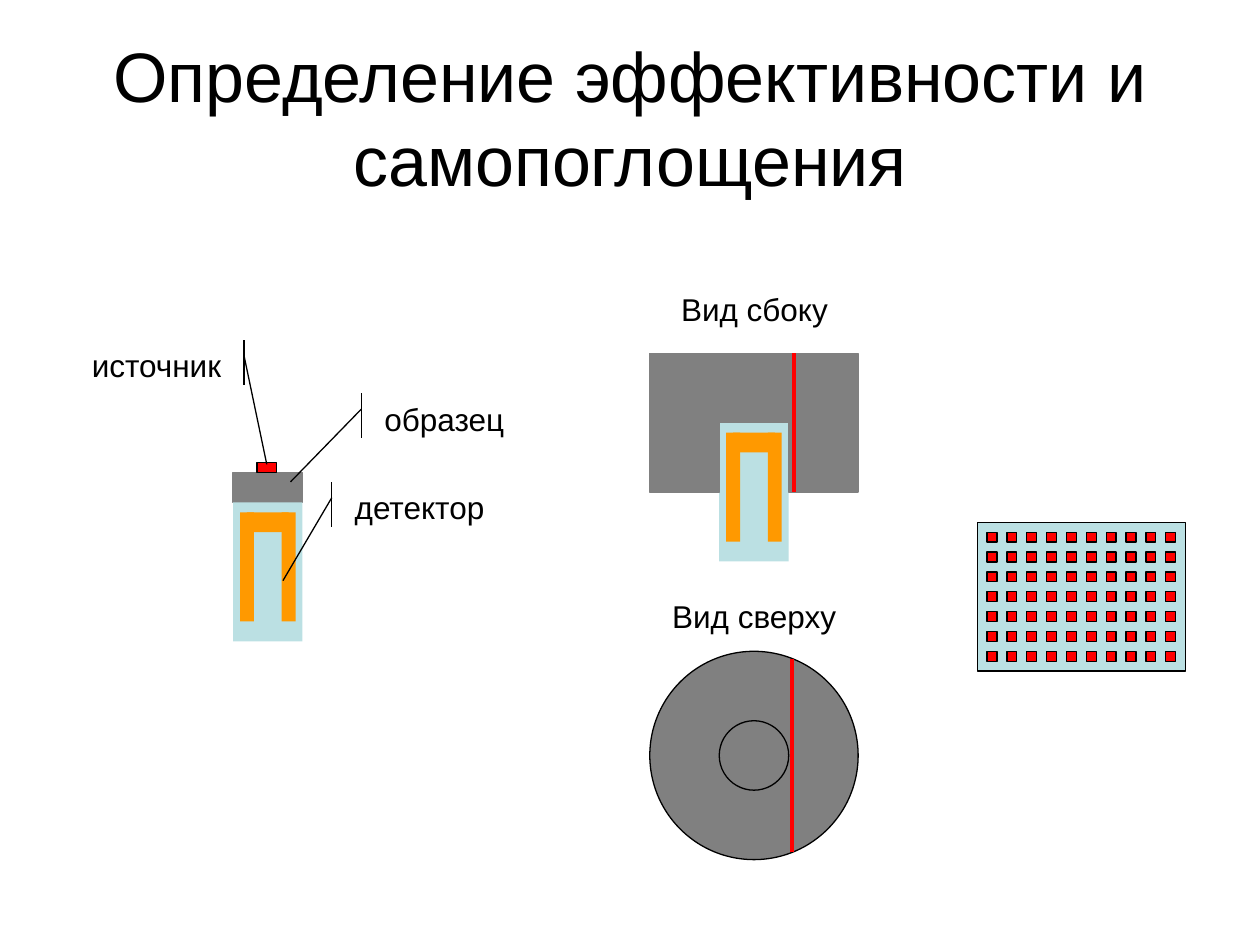
import pptx
import pptx.util
import pptx.dml.color
import pptx.enum.shapes
import pptx.enum.text
import pptx.oxml.xmlchemy

Cm = pptx.util.Cm
Pt = pptx.util.Pt
RGBColor = pptx.dml.color.RGBColor
Kind = pptx.enum.shapes.MSO_SHAPE
Align = pptx.enum.text.PP_ALIGN
Anchor = pptx.enum.text.MSO_ANCHOR

BLACK = RGBColor(0x00, 0x00, 0x00)
GRAY = RGBColor(0x80, 0x80, 0x80)
TEAL = RGBColor(0xBB, 0xE0, 0xE3)
ORANGE = RGBColor(0xFF, 0x99, 0x00)
RED = RGBColor(0xFF, 0x00, 0x00)


def draw(shapes, kind, box, fill=None, line=None):
    shape = shapes.add_shape(kind, *[Cm(v) for v in box])
    shape.shadow.inherit = False
    if fill is None:
        shape.fill.background()
    else:
        shape.fill.solid()
        shape.fill.fore_color.rgb = fill
    if line is None:
        shape.line.fill.background()
    else:
        shape.line.color.rgb = line
        shape.line.width = Pt(0.75)
    return shape


def write(frame, text, size, align, anchor=Anchor.TOP):
    frame.vertical_anchor = anchor
    para = frame.paragraphs[0]
    para.text = text
    para.alignment = align
    para.font.size = Pt(size)
    para.font.name = "Arial"
    para.font.color.rgb = BLACK


def title(shapes, box, text):
    frame = shapes.add_textbox(*[Cm(v) for v in box]).text_frame
    frame.word_wrap = True
    write(frame, text, 40, Align.CENTER, Anchor.MIDDLE)


def label(shapes, box, text):
    frame = shapes.add_textbox(*[Cm(v) for v in box]).text_frame
    frame.word_wrap = False
    frame.auto_size = pptx.enum.text.MSO_AUTO_SIZE.SHAPE_TO_FIT_TEXT
    write(frame, text, 18, Align.LEFT)


def callout(shapes, left, top, text, points, align=Align.LEFT):
    box = (left, top, 3.58, 0.91)
    shape = draw(shapes, Kind.LINE_CALLOUT_1_ACCENT_BAR, box, None, BLACK)
    for index, value in enumerate(points):
        shape.adjustments[index] = value
    write(shape.text_frame, text, 18, align)


def beam(shapes, x, top, bottom):
    ends = [Cm(v) for v in (x, top, x, bottom)]
    line = shapes.add_connector(pptx.enum.shapes.MSO_CONNECTOR.STRAIGHT, *ends)
    line.line.color.rgb = RED
    line.line.width = Pt(2)
    line._element.spPr.append(pptx.oxml.xmlchemy.OxmlElement("a:effectLst"))


def detector(shapes, left, top):
    group = shapes.add_group_shape().shapes
    draw(group, Kind.RECTANGLE, (left, top, 1.4, 2.8), TEAL)
    for x, wide, high in ((0.28, 0.84, 0.4), (0.14, 0.28, 2.2), (0.98, 0.28, 2.2)):
        draw(group, Kind.RECTANGLE, (left + x, top + 0.2, wide, high), ORANGE)


def setup(shapes, left, top):
    draw(shapes, Kind.RECTANGLE, (left, top, 1.4, 0.6), GRAY, GRAY)
    detector(shapes, left, top + 0.6)
    callout(shapes, left + 2.8, top - 1.6, "образец", (0.346, -0.059, 1.962, -0.459))
    callout(shapes, left + 2.2, top + 0.19, "детектор", (0.346, -0.059, 2.183, -0.334))
    draw(shapes, Kind.RECTANGLE, (left + 0.48, top - 0.2, 0.4, 0.2), RED, BLACK)
    callout(shapes, left - 3.57, top - 2.67, "источник",
            (0.346, 1.059, 2.75, 1.187), Align.RIGHT)


def side(shapes, left, top):
    detector(shapes, left + 1.4, top + 1.4)
    group = shapes.add_group_shape().shapes
    for x, wide, high in ((0.8, 2.4, 1.4), (2.8, 1.4, 2.8), (0, 1.4, 2.8)):
        draw(group, Kind.RECTANGLE, (left + x, top, wide, high), GRAY, GRAY)
    beam(shapes, left + 2.91, top, top + 2.8)
    label(shapes, (left + 0.38, top - 1.4, 3.55, 1.02), "Вид сбоку")


def above(shapes, left, top):
    for gap, size in ((0, 4.2), (1.4, 1.4)):
        draw(shapes, Kind.OVAL, (left + gap, top + gap, size, size), GRAY, BLACK)
    beam(shapes, left + 2.87, top + 0.15, top + 4.05)
    label(shapes, (left + 0.2, top - 1.21, 3.9, 1.02), "Вид сверху")


def grid(shapes, left, top, cols, rows):
    group = shapes.add_group_shape().shapes
    pitch, size = 0.4, 0.2
    box = (left, top, cols * pitch + size, rows * pitch + size)
    draw(group, Kind.RECTANGLE, box, TEAL, BLACK)
    for row in range(rows):
        for col in range(cols):
            cell = (left + size + col * pitch, top + size + row * pitch, size, size)
            draw(group, Kind.RECTANGLE, cell, RED, BLACK)


def main():
    deck = pptx.Presentation()
    deck.slide_width, deck.slide_height = Cm(25.4), Cm(19.05)
    shapes = deck.slides.add_slide(deck.slide_layouts[6]).shapes
    title(shapes, (1.27, 0.76, 22.86, 3.18), "Определение эффективности и самопоглощения")
    setup(shapes, 4.7, 9.53)
    side(shapes, 13.1, 7.12)
    above(shapes, 13.1, 13.13)
    grid(shapes, 19.7, 10.53, 10, 7)
    deck.save("out.pptx")


if __name__ == "__main__":
    main()
